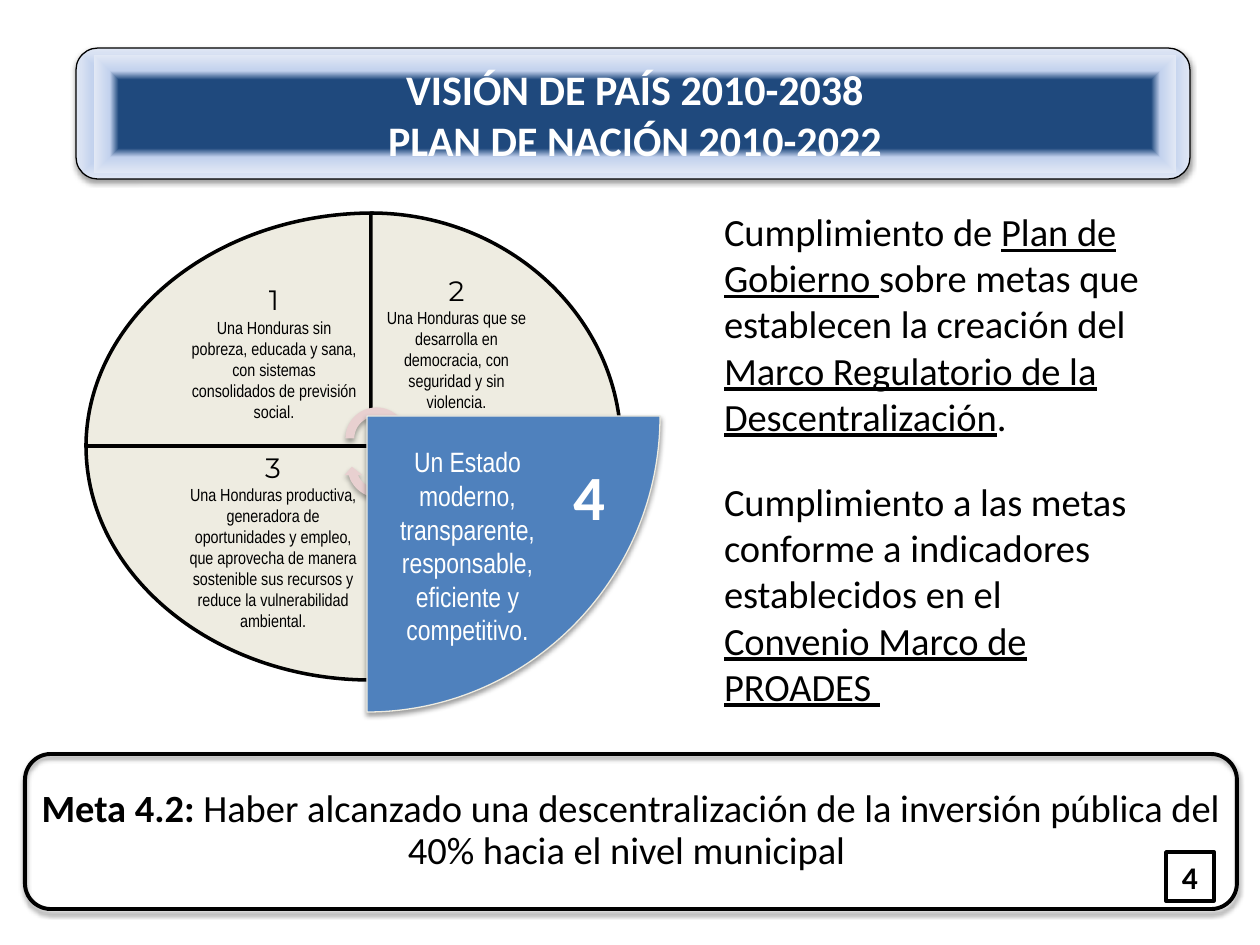
from dataclasses import dataclass

from lxml import etree
from pptx import Presentation
from pptx.dml.color import RGBColor
from pptx.enum.shapes import MSO_SHAPE
from pptx.enum.text import MSO_ANCHOR, PP_ALIGN
from pptx.oxml.ns import qn
from pptx.util import Emu, Pt

EMU_PER_PX = 914400 / 126
ARC_HANDLE = 0.55  # control point distance of a quarter ellipse
CENTER, LEFT = PP_ALIGN.CENTER, PP_ALIGN.LEFT
MIDDLE, TOP = MSO_ANCHOR.MIDDLE, MSO_ANCHOR.TOP
RECTANGLE, ROUNDED = MSO_SHAPE.RECTANGLE, MSO_SHAPE.ROUNDED_RECTANGLE
OVAL, CIRCULAR_ARROW = MSO_SHAPE.OVAL, MSO_SHAPE.CIRCULAR_ARROW


@dataclass(frozen=True)
class Theme:
    black: str = "000000"
    white: str = "FFFFFF"
    cream: str = "EEECE1"
    blue: str = "4F81BD"
    pink: str = "E8D0D0"
    banner: tuple = ((58, "1F497D"), (73, "C2D1ED"), (100, "E1E8F5"))
    body_font: str = "Calibri"
    number_font: str = "Montserrat"
    narrow_font: str = "Arial Narrow"
    small: int = 10
    medium: int = 16
    badge: int = 18
    body: int = 22
    title: int = 24
    big: int = 36


THEME = Theme()


@dataclass(frozen=True)
class Run:
    text: str
    size: int = THEME.body
    font: str = THEME.body_font
    color: str = THEME.black
    bold: bool = False
    underline: bool = False


@dataclass(frozen=True)
class Box:
    left: int
    top: int
    width: int
    height: int


@dataclass(frozen=True)
class Quadrant:
    """A quarter ellipse; the signs of the radii choose its side."""
    center: tuple[int, int]
    radii: tuple[int, int]
    insets: tuple[int, int, int, int]
    paragraphs: list[list[Run]]
    fill: str = THEME.cream
    line: str = THEME.black
    line_width: float = 2
    shadow: int = 0


def px(value: float) -> Emu:
    return Emu(round(value * EMU_PER_PX))


def numbered(number: str, sentence: str) -> list[list[Run]]:
    return [[Run(number, THEME.medium, THEME.number_font)],
            [Run(sentence, THEME.small, THEME.narrow_font)]]


QUADRANTS = [
    Quadrant((373, 447), (-287, -234), (105, 70, 16, 0), numbered(
        "1", "Una Honduras sin pobreza, educada y sana, con sistemas "
        "consolidados de previsión social.")),
    Quadrant((371, 446), (250, -233), (15, 60, 94, 0), numbered(
        "2", "Una Honduras que se desarrolla en democracia, con seguridad "
        "y sin violencia.")),
    Quadrant((371, 446), (-285, 234), (98, 4, 9, 0), numbered(
        "3", "Una Honduras productiva, generadora de oportunidades y empleo, "
        "que aprovecha de manera sostenible sus recursos y reduce la "
        "vulnerabilidad ambiental.")),
]
HIGHLIGHT = Quadrant(
    (367, 416), (293, 296), (11, 29, 103, 0),
    [[Run("Un Estado moderno, transparente, responsable, eficiente y "
          "competitivo.", THEME.medium, THEME.narrow_font, THEME.white)]],
    THEME.blue, THEME.cream, 0.75, 38)
ARROWS = [(Box(341, 403, 71, 71), 0), (Box(343, 431, 71, 71), 180)]
COMMITMENTS = [
    (Box(711, 202, 446, 246), [
        Run("Cumplimiento de "), Run("Plan de Gobierno ", underline=True),
        Run("sobre metas que establecen la creación del "),
        Run("Marco Regulatorio de la Descentralización", underline=True),
        Run(".")]),
    (Box(711, 472, 446, 246), [
        Run("Cumplimiento a las metas conforme a indicadores establecidos en el "),
        Run("Convenio Marco de PROADES ", underline=True)]),
]


def write(shape, paragraphs: list[list[Run]], insets=(0, 0, 0, 0),
          align=CENTER, anchor=MIDDLE, spacing: float = 1, wrap=True) -> None:
    frame = shape.text_frame
    frame.word_wrap = wrap
    frame.vertical_anchor = anchor
    (frame.margin_left, frame.margin_top,
     frame.margin_right, frame.margin_bottom) = map(px, insets)
    for index, runs in enumerate(paragraphs):
        paragraph = frame.add_paragraph() if index else frame.paragraphs[0]
        paragraph.alignment = align
        paragraph.line_spacing = spacing
        for item in runs:
            run = paragraph.add_run()
            run.text = item.text
            run.font.name = item.font
            run.font.size = Pt(item.size)
            run.font.bold = item.bold
            run.font.underline = item.underline
            run.font.color.rgb = RGBColor.from_string(item.color)


def add_color(parent, color: str, alpha: int = 100) -> None:
    element = etree.SubElement(parent, qn("a:srgbClr"), val=color)
    if alpha < 100:
        etree.SubElement(element, qn("a:alpha"), val=str(alpha * 1000))


def style(shape, fill: str = "", line: str = "", line_width: float = 0,
          shadow: int = 0, shadow_distance: float = 1.6) -> None:
    """Set fill, line and shadow opacity; an empty colour means none."""
    if fill:
        shape.fill.solid()
        shape.fill.fore_color.rgb = RGBColor.from_string(fill)
    else:
        shape.fill.background()
    if line:
        shape.line.color.rgb = RGBColor.from_string(line)
        shape.line.width = Pt(line_width)
    else:
        shape.line.fill.background()
    shape.shadow.inherit = False
    if shadow:
        effects = shape._element.spPr.find(qn("a:effectLst"))
        outer = etree.SubElement(
            effects, qn("a:outerShdw"), blurRad=str(Pt(3.1)),
            dist=str(Pt(shadow_distance)), dir="5400000", rotWithShape="0")
        add_color(outer, THEME.black, shadow)


def fill_banner(shape) -> None:
    """Fill with a gradient that runs from the middle to the edges."""
    shape.fill.gradient()
    gradient = shape._element.spPr.find(qn("a:gradFill"))
    for child in list(gradient):
        gradient.remove(child)
    stops = etree.SubElement(gradient, qn("a:gsLst"))
    for position, color in THEME.banner:
        add_color(etree.SubElement(stops, qn("a:gs"), pos=str(position * 1000)), color)
    direction = etree.SubElement(gradient, qn("a:path"), path="shape")
    etree.SubElement(direction, qn("a:fillToRect"),
                     **dict.fromkeys("ltrb", "50000"))


def add_box(slide, kind, box: Box):
    return slide.shapes.add_shape(
        kind, px(box.left), px(box.top), px(box.width), px(box.height))


def add_text(slide, box: Box, paragraphs: list[list[Run]], **options) -> None:
    shape = slide.shapes.add_textbox(
        px(box.left), px(box.top), px(box.width), px(box.height))
    write(shape, paragraphs, **options)


def add_quadrant(slide, quadrant: Quadrant) -> None:
    """Draw a triangle and bend its first side into a quarter ellipse."""
    (x, y), (radius_x, radius_y) = quadrant.center, quadrant.radii
    end_x, end_y = x + radius_x, y + radius_y
    builder = slide.shapes.build_freeform(px(end_x), px(y))
    builder.add_line_segments([(px(x), px(end_y)), (px(x), px(y))], close=True)
    shape = builder.convert_to_shape()

    side = next(shape._element.iter(qn("a:lnTo")))
    curve = etree.Element(qn("a:cubicBezTo"))
    for point_x, point_y in ((end_x, y + ARC_HANDLE * radius_y),
                             (x + ARC_HANDLE * radius_x, end_y), (x, end_y)):
        etree.SubElement(curve, qn("a:pt"), x=str(px(point_x) - shape.left),
                         y=str(px(point_y) - shape.top))
    side.getparent().replace(side, curve)

    style(shape, quadrant.fill, quadrant.line, quadrant.line_width, quadrant.shadow)
    write(shape, quadrant.paragraphs, quadrant.insets, anchor=TOP)


def main() -> None:
    presentation = Presentation()
    presentation.slide_width, presentation.slide_height = px(1260), px(945)
    slide = presentation.slides.add_slide(presentation.slide_layouts[6])

    style(add_box(slide, ROUNDED, Box(25, 754, 1212, 155)),
          line=THEME.black, line_width=2.25, shadow=38)
    add_text(slide, Box(25, 761, 1212, 140), [[
        Run("Meta 4.2: ", bold=True),
        Run("Haber alcanzado una descentralización de la inversión pública "
            "del 40% hacia el nivel municipal ")]],
        insets=(8, 8, 8, 8), spacing=0.9)

    for quadrant in QUADRANTS:
        add_quadrant(slide, quadrant)
    for box, rotation in ARROWS:
        arrow = add_box(slide, CIRCULAR_ARROW, box)
        arrow.rotation = rotation
        style(arrow, THEME.pink, shadow=35, shadow_distance=1.8)
    add_quadrant(slide, HIGHLIGHT)
    number = add_box(slide, OVAL, Box(554, 464, 47, 63))
    style(number)
    write(number, [[Run("4", THEME.big, color=THEME.white, bold=True)]],
          insets=(24, 0, 0, 0), wrap=False)

    frame = add_box(slide, ROUNDED, Box(76, 48, 1114, 131))
    style(frame, line=THEME.black, line_width=0.75, shadow=38)
    title = add_box(slide, RECTANGLE, Box(94, 55, 1082, 118))
    style(title)
    for shape in (frame, title):
        fill_banner(shape)
    write(title, [[Run(text, THEME.title, color=THEME.white, bold=True)] for text in
                  ("VISIÓN DE PAÍS 2010-2038", "PLAN DE NACIÓN 2010-2022")],
          insets=(8, 8, 8, 8))

    for box, runs in COMMITMENTS:
        add_text(slide, box, [runs], insets=(13, 6, 13, 6), align=LEFT, anchor=TOP)
    page = add_box(slide, RECTANGLE, Box(1166, 852, 48, 49))
    style(page, THEME.white, THEME.black, 2)
    write(page, [[Run("4", THEME.badge, bold=True)]])

    presentation.save("out.pptx")


if __name__ == "__main__":
    main()
